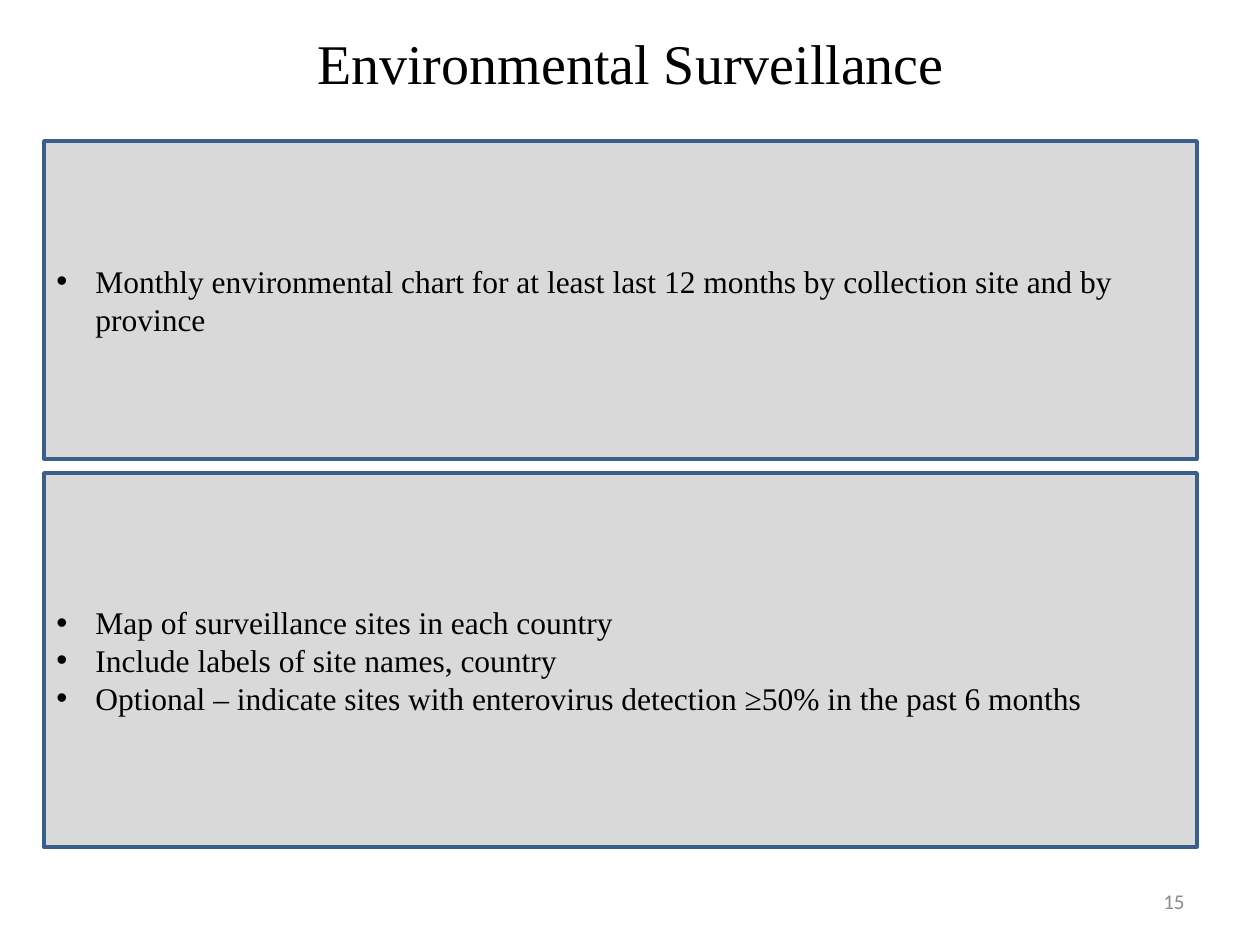
from dataclasses import dataclass

from lxml.etree import SubElement
from pptx import Presentation
from pptx.dml.color import RGBColor
from pptx.enum.shapes import MSO_SHAPE as Shape
from pptx.enum.text import MSO_ANCHOR as Anchor, PP_ALIGN as Align
from pptx.oxml.ns import qn
from pptx.slide import Slide
from pptx.util import Pt

PX_PER_INCH = 126
COLORS = {"text": "000000", "panel": "D9D9D9", "border": "3A5F8C", "number": "8C8C8C"}
SERIF, SANS = "Times New Roman", "Calibri"
PANEL_LEFT, PANEL_WIDTH = 44, 1153
BULLET_INDENT = 39


@dataclass
class Panel:
    top: int
    height: int
    bullets: list[str]


PANELS = [
    Panel(141, 318, [
        "Monthly environmental chart for at least last 12 months "
        "by collection site and by province",
    ]),
    Panel(473, 374, [
        "Map of surveillance sites in each country",
        "Include labels of site names, country",
        "Optional – indicate sites with enterovirus detection ≥50% in the past 6 months",
    ]),
]


def px(length: int) -> int:
    return round(length * 914400 / PX_PER_INCH)


def color(name: str) -> RGBColor:
    return RGBColor.from_string(COLORS[name])


def write(paragraph, text: str, size: int, font: str, ink: str, align: Align) -> None:
    paragraph.alignment = align
    run = paragraph.add_run()
    run.text = text
    run.font.size = Pt(size)
    run.font.name = font
    run.font.color.rgb = color(ink)


def add_bullet(paragraph) -> None:
    props = paragraph._p.get_or_add_pPr()
    props.set("marL", str(px(BULLET_INDENT)))
    props.set("indent", str(-px(BULLET_INDENT)))
    SubElement(props, qn("a:buFont"), typeface="Arial")
    SubElement(props, qn("a:buChar"), char="•")


def draw_panel(slide: Slide, panel: Panel) -> None:
    box = slide.shapes.add_shape(Shape.RECTANGLE, px(PANEL_LEFT), px(panel.top),
                                 px(PANEL_WIDTH), px(panel.height))
    box.shadow.inherit = False
    box.fill.solid()
    box.fill.fore_color.rgb = color("panel")
    box.line.color.rgb = color("border")
    box.line.width = Pt(2)
    frame = box.text_frame
    frame.word_wrap = True
    frame.vertical_anchor = Anchor.MIDDLE
    for index, bullet in enumerate(panel.bullets):
        paragraph = frame.add_paragraph() if index else frame.paragraphs[0]
        write(paragraph, bullet, 18, SERIF, "text", Align.LEFT)
        add_bullet(paragraph)


def main() -> None:
    deck = Presentation()
    deck.slide_width, deck.slide_height = px(1260), px(945)
    slide = deck.slides.add_slide(deck.slide_layouts[5])

    # Title
    title = slide.shapes.title
    title.left, title.top, title.width, title.height = px(2), px(0), px(1258), px(125)
    title.text_frame.vertical_anchor = Anchor.MIDDLE
    write(title.text_frame.paragraphs[0], "Environmental Surveillance",
          32, SERIF, "text", Align.CENTER)

    # Page number
    number = slide.shapes.add_textbox(px(903), px(876), px(294), px(50)).text_frame
    number.word_wrap = True
    number.vertical_anchor = Anchor.MIDDLE
    write(number.paragraphs[0], "15", 12, SANS, "number", Align.RIGHT)

    # Content panels
    for panel in PANELS:
        draw_panel(slide, panel)

    deck.save("out.pptx")


if __name__ == "__main__":
    main()
